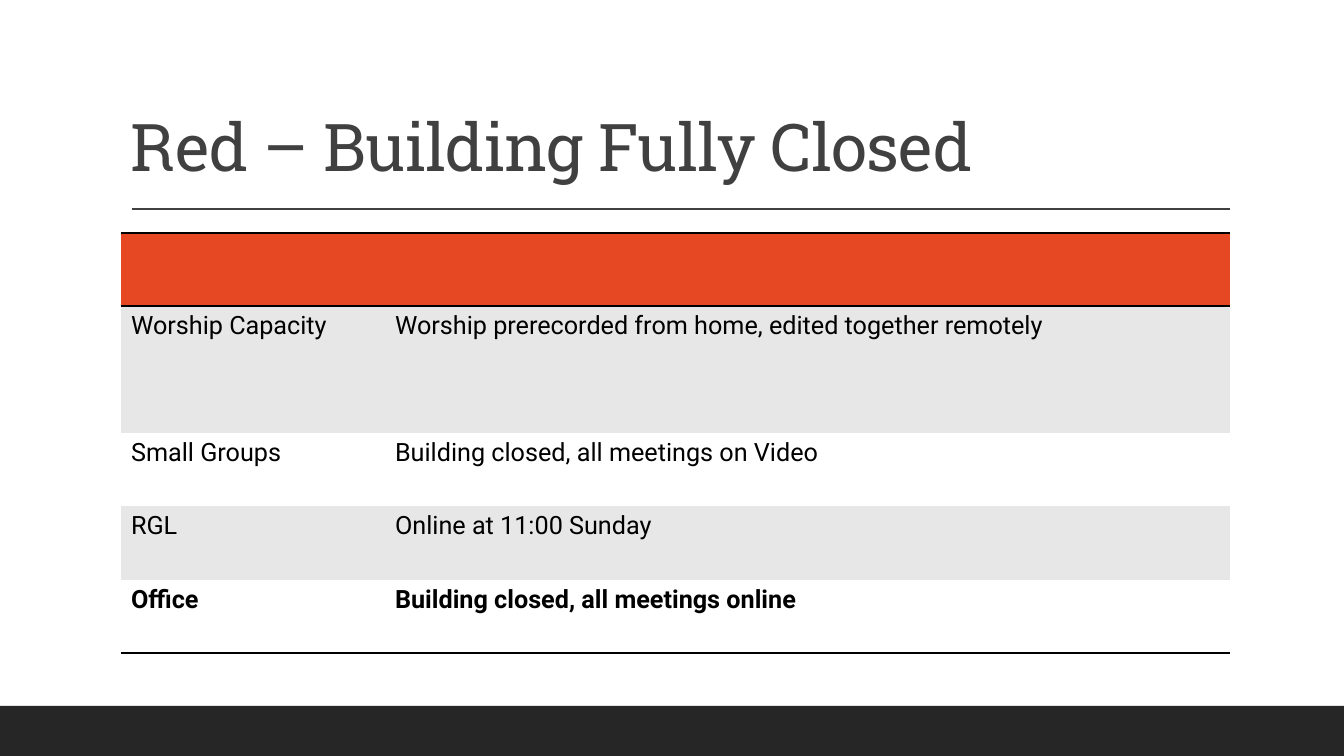
"""Build the slide listing what a fully closed building means for each activity."""
from lxml.etree import SubElement
from pptx import Presentation
from pptx.dml.color import RGBColor
from pptx.enum.shapes import MSO_CONNECTOR, MSO_SHAPE
from pptx.enum.text import MSO_ANCHOR
from pptx.oxml.ns import qn
from pptx.util import Pt

TITLE = "Red – Building Fully Closed"
ROWS = [
    ("", ""),
    ("Worship Capacity", "Worship prerecorded from home, edited together remotely"),
    ("Small Groups", "Building closed, all meetings on Video"),
    ("RGL", "Online at 11:00 Sunday"),
    ("Office", "Building closed, all meetings online"),
]
ROW_HEIGHTS = [73, 127, 73, 74, 73]
COLUMN_WIDTHS = [264, 845]
TABLE_LEFT, TABLE_TOP = 121, 233
SLIDE_WIDTH, SLIDE_HEIGHT = 1344, 756
FOOTER_TOP = 706
RULE_LEFT, RULE_RIGHT, RULE_TOP = 132, 1230, 209

RED = RGBColor(0xE6, 0x48, 0x23)
BAND = RGBColor(0xE7, 0xE7, 0xE7)
WHITE = RGBColor(0xFF, 0xFF, 0xFF)
BLACK = RGBColor(0, 0, 0)
GRAY = RGBColor(0x40, 0x40, 0x40)
CHARCOAL = RGBColor(0x26, 0x26, 0x26)
PLAIN_TABLE_STYLE = "{2D5ABB26-0587-4C30-8999-92F81FD0307C}"


def px(length):
    return round(length * 914400 / 100.8)


def add_footer(slide):
    footer = slide.shapes.add_shape(
        MSO_SHAPE.RECTANGLE, 0, px(FOOTER_TOP), px(SLIDE_WIDTH), px(SLIDE_HEIGHT - FOOTER_TOP))
    footer.shadow.inherit = False
    footer.fill.solid()
    footer.fill.fore_color.rgb = CHARCOAL
    footer.line.fill.background()


def add_rule(slide):
    rule = slide.shapes.add_connector(
        MSO_CONNECTOR.STRAIGHT, px(RULE_LEFT), px(RULE_TOP), px(RULE_RIGHT), px(RULE_TOP))
    rule.line.color.rgb = GRAY
    rule.line.width = Pt(1)
    SubElement(rule.element.spPr, qn("a:effectLst"))


def add_title(slide):
    box = slide.shapes.add_textbox(px(121), px(31), px(1109), px(160))
    frame = box.text_frame
    frame.word_wrap = True
    frame.vertical_anchor = MSO_ANCHOR.BOTTOM
    paragraph = frame.paragraphs[0]
    paragraph.line_spacing = 0.9
    run = paragraph.add_run()
    run.text = TITLE
    run.font.name = "Roboto Slab"
    run.font.size = Pt(47)
    run.font.color.rgb = GRAY
    run.font._element.set("spc", "-50")


def add_border(cell, side):
    properties = cell._tc.get_or_add_tcPr()
    line = SubElement(properties, qn(f"a:{side}"), w=str(Pt(2)))
    fill = SubElement(line, qn("a:solidFill"))
    SubElement(fill, qn("a:srgbClr"), val=str(BLACK))


def style_cell(cell, text, row):
    last = len(ROWS) - 1
    if row == 0:
        add_border(cell, "lnT")
    if row in (0, last):
        add_border(cell, "lnB")
    cell.fill.solid()
    cell.fill.fore_color.rgb = RED if row == 0 else BAND if row % 2 else WHITE
    cell.text = text
    font = cell.text_frame.paragraphs[0].font
    font.name = "Roboto"
    font.size = Pt(18)
    font.bold = row == last
    font.color.rgb = BLACK


def add_status_table(slide):
    frame = slide.shapes.add_table(
        len(ROWS), len(COLUMN_WIDTHS), px(TABLE_LEFT), px(TABLE_TOP),
        px(sum(COLUMN_WIDTHS)), px(sum(ROW_HEIGHTS)))
    table = frame.table
    table.horz_banding = False
    table._tbl.tblPr.find(qn("a:tableStyleId")).text = PLAIN_TABLE_STYLE
    for column, width in zip(table.columns, COLUMN_WIDTHS):
        column.width = px(width)
    for row, (texts, height) in enumerate(zip(ROWS, ROW_HEIGHTS)):
        table.rows[row].height = px(height)
        for column, text in enumerate(texts):
            style_cell(table.cell(row, column), text, row)


def main():
    presentation = Presentation()
    presentation.slide_width = px(SLIDE_WIDTH)
    presentation.slide_height = px(SLIDE_HEIGHT)
    slide = presentation.slides.add_slide(presentation.slide_layouts[6])
    add_footer(slide)
    add_rule(slide)
    add_title(slide)
    add_status_table(slide)
    presentation.save("out.pptx")


if __name__ == "__main__":
    main()
